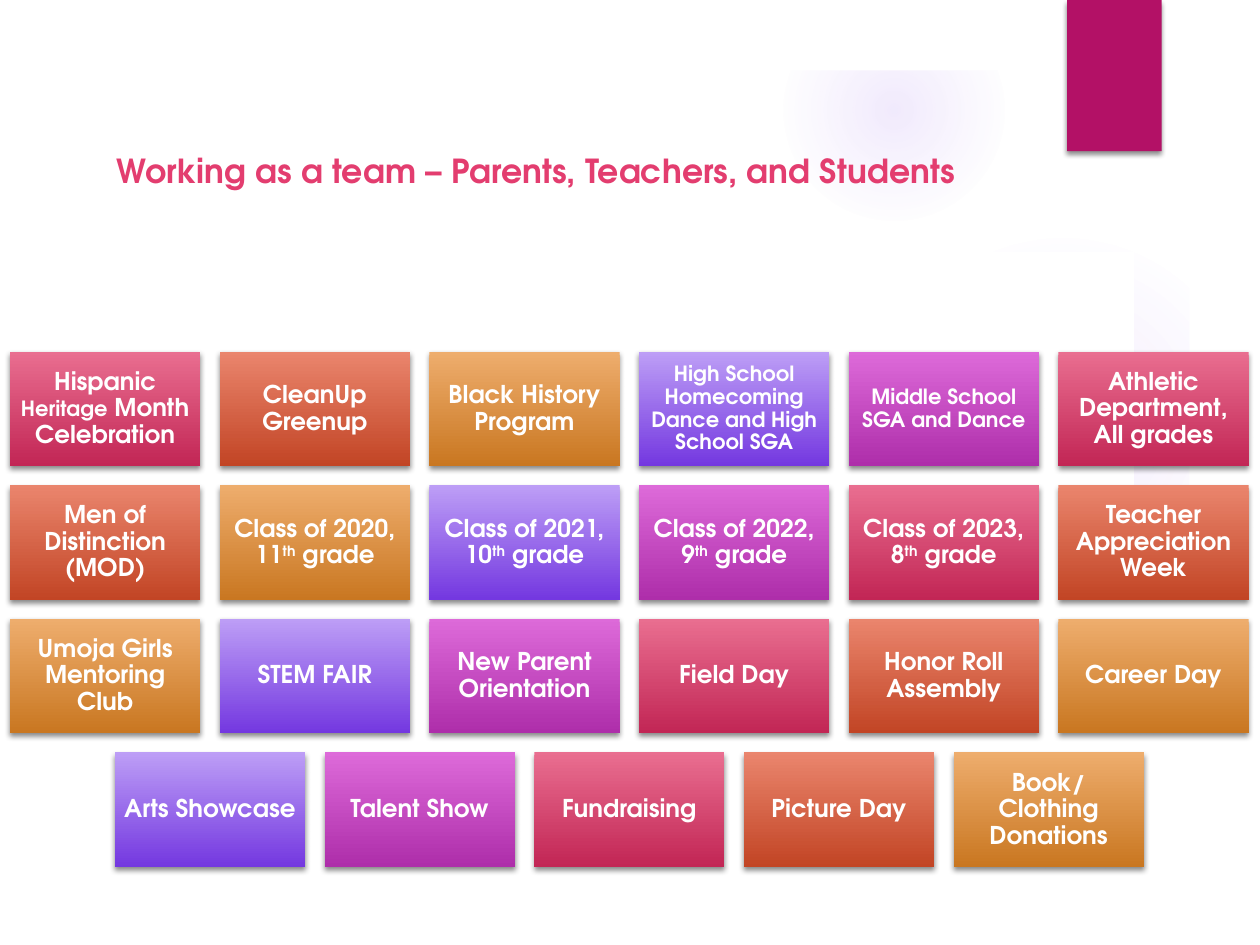
from dataclasses import dataclass

from lxml import etree
from pptx import Presentation
from pptx.dml.color import RGBColor
from pptx.enum.shapes import MSO_SHAPE as Preset
from pptx.enum.text import MSO_ANCHOR as Anchor, PP_ALIGN as Align
from pptx.oxml.ns import qn
from pptx.util import Inches, Pt


@dataclass(frozen=True)
class Theme:
    font: str = "TeX Gyre Adventor"
    title: str = "E33D6F"
    ribbon: str = "B31166"
    glow: str = "9B6BF2"
    white: str = "FFFFFF"
    black: str = "000000"
    title_size: float = 18.9
    body_size: float = 14
    small_size: float = 12
    tiles: tuple = (
        ("E96E90", "C22655"),
        ("EA856D", "C24525"),
        ("EEAD6D", "C97721"),
        ("BD9EF6", "7438E0"),
        ("DD6AD9", "AE2EAA"),
    )


THEME = Theme()
TITLE = "Working as a team – Parents, Teachers, and Students"


def body(text):
    return text, THEME.body_size, False


def small(text):
    return text, THEME.small_size, False


def class_runs(year, grade):
    return [body(f"Class of {year}, {grade}"), ("th", THEME.body_size, True), body(" grade")]


ROWS = [
    [
        [body("Hispanic "), small("Heritage"), body(" Month Celebration")],
        [body("CleanUp Greenup")],
        [body("Black History Program")],
        [small("High School Homecoming Dance and High School SGA")],
        [small("Middle School SGA and Dance")],
        [body("Athletic Department, All grades")],
    ],
    [
        [body("Men of Distinction (MOD)")],
        class_runs(2020, 11),
        class_runs(2021, 10),
        class_runs(2022, 9),
        class_runs(2023, 8),
        [body("Teacher Appreciation Week")],
    ],
    [
        [body("Umoja Girls Mentoring Club")],
        [body("STEM FAIR")],
        [body("New Parent Orientation")],
        [body("Field Day")],
        [body("Honor Roll Assembly")],
        [body("Career Day")],
    ],
    [
        [body("Arts Showcase")],
        [body("Talent Show")],
        [body("Fundraising")],
        [body("Picture Day")],
        [body("Book/ Clothing Donations")],
    ],
]

GLOWS = [
    ((6.89, 1.83, 3.08), ((0, 7), (36, 6), (69, 0))),
    ((6.22, 0, 1.75), ((0, 14), (36, 7), (73, 0))),
]
PANEL = [
    (0.53, 2.03), (1.32, 2.13), (2.22, 2.22), (3.07, 2.28), (4.04, 2.33),
    (5.11, 2.34), (6.25, 2.33), (7.04, 2.29), (7.85, 2.24), (8.66, 2.15),
    (9.47, 2.03), (9.47, 6.99), (0.53, 6.99),
]
SLIDE_WIDTH, SLIDE_HEIGHT = 10, 7.5
FRAME_WIDTH = 0.56
GRID_LEFT, GRID_RIGHT, GRID_TOP = 0.08, 9.91, 2.79
TILE_WIDTH, TILE_HEIGHT, ROW_STEP = 1.51, 0.91, 1.06
COLUMNS = 6
COLUMN_STEP = (GRID_RIGHT - GRID_LEFT - TILE_WIDTH) / (COLUMNS - 1)


def color(value):
    return RGBColor.from_string(value)


def add_node(parent, tag, **attributes):
    return etree.SubElement(parent, qn(tag), {key: str(value) for key, value in attributes.items()})


def add_preset(page, preset, left, top, width, height):
    box = page.shapes.add_shape(preset, Inches(left), Inches(top), Inches(width), Inches(height))
    box.shadow.inherit = False
    box.line.fill.background()
    return box


def paint(box, value):
    box.fill.solid()
    box.fill.fore_color.rgb = color(value)


def drop_shadow(box):
    effects = box._element.spPr.find(qn("a:effectLst"))
    shadow = add_node(effects, "a:outerShdw", blurRad=Pt(3), dist=Pt(2), dir=5400000, rotWithShape=0)
    add_node(add_node(shadow, "a:srgbClr", val=THEME.black), "a:alpha", val=45000)


def add_glow(page, place, stops):
    left, top, size = place
    box = add_preset(page, Preset.OVAL, left, top, size, size)
    box.fill.gradient()
    gradient = box._element.spPr.find(qn("a:gradFill"))
    for child in list(gradient):
        gradient.remove(child)
    stop_list = add_node(gradient, "a:gsLst")
    for position, alpha in stops:
        stop = add_node(stop_list, "a:gs", pos=position * 1000)
        add_node(add_node(stop, "a:srgbClr", val=THEME.glow), "a:alpha", val=alpha * 1000)
    center = add_node(gradient, "a:path", path="circle")
    add_node(center, "a:fillToRect", l=50000, t=50000, r=50000, b=50000)


def add_span(para, text, size, value, raised=False):
    span = para.add_run()
    span.text = text
    span.font.name = THEME.font
    span.font.size = Pt(size)
    span.font.bold = True
    span.font.color.rgb = color(value)
    if raised:
        span._r.get_or_add_rPr().set("baseline", "30000")


def add_backdrop(page):
    for place, stops in GLOWS:
        add_glow(page, place, stops)
    builder = page.shapes.build_freeform(*PANEL[0], scale=Inches(1))
    builder.add_line_segments(PANEL[1:], close=True)
    panel = builder.convert_to_shape()
    panel.shadow.inherit = False
    panel.line.fill.background()
    paint(panel, THEME.white)
    frame = add_preset(page, Preset.FRAME, 0, 0, SLIDE_WIDTH, SLIDE_HEIGHT)
    frame.adjustments[0] = FRAME_WIDTH / SLIDE_HEIGHT
    paint(frame, THEME.white)
    ribbon = add_preset(page, Preset.RECTANGLE, 8.47, 0, 0.75, 1.2)
    paint(ribbon, THEME.ribbon)
    drop_shadow(ribbon)


def add_title(page):
    box = page.shapes.add_textbox(Inches(0.83), Inches(0.75), Inches(7.76), Inches(0.81))
    box.text_frame.word_wrap = True
    box.text_frame.vertical_anchor = Anchor.BOTTOM
    add_span(box.text_frame.paragraphs[0], TITLE, THEME.title_size, THEME.title)


def add_tile(page, left, top, colors, runs):
    box = add_preset(page, Preset.RECTANGLE, left, top, TILE_WIDTH, TILE_HEIGHT)
    box.fill.gradient()
    box.fill.gradient_angle = 270
    for stop, position, value in zip(box.fill.gradient_stops, (0, 1), colors):
        stop.position = position
        stop.color.rgb = color(value)
    drop_shadow(box)
    frame = box.text_frame
    frame.word_wrap = True
    frame.vertical_anchor = Anchor.MIDDLE
    frame.margin_left = frame.margin_right = frame.margin_top = frame.margin_bottom = Inches(0.06)
    para = frame.paragraphs[0]
    para.alignment = Align.CENTER
    para.line_spacing = 0.9
    for text, size, raised in runs:
        add_span(para, text, size, THEME.white, raised)


def add_tiles(page):
    for row, tiles in enumerate(ROWS):
        start = GRID_LEFT + (COLUMNS - len(tiles)) * COLUMN_STEP / 2
        for column, runs in enumerate(tiles):
            colors = THEME.tiles[(row * COLUMNS + column) % len(THEME.tiles)]
            add_tile(page, start + column * COLUMN_STEP, GRID_TOP + row * ROW_STEP, colors, runs)


def main():
    deck = Presentation()
    deck.slide_width, deck.slide_height = Inches(SLIDE_WIDTH), Inches(SLIDE_HEIGHT)
    page = deck.slides.add_slide(deck.slide_layouts[6])
    add_backdrop(page)
    add_title(page)
    add_tiles(page)
    deck.save("out.pptx")


if __name__ == "__main__":
    main()
